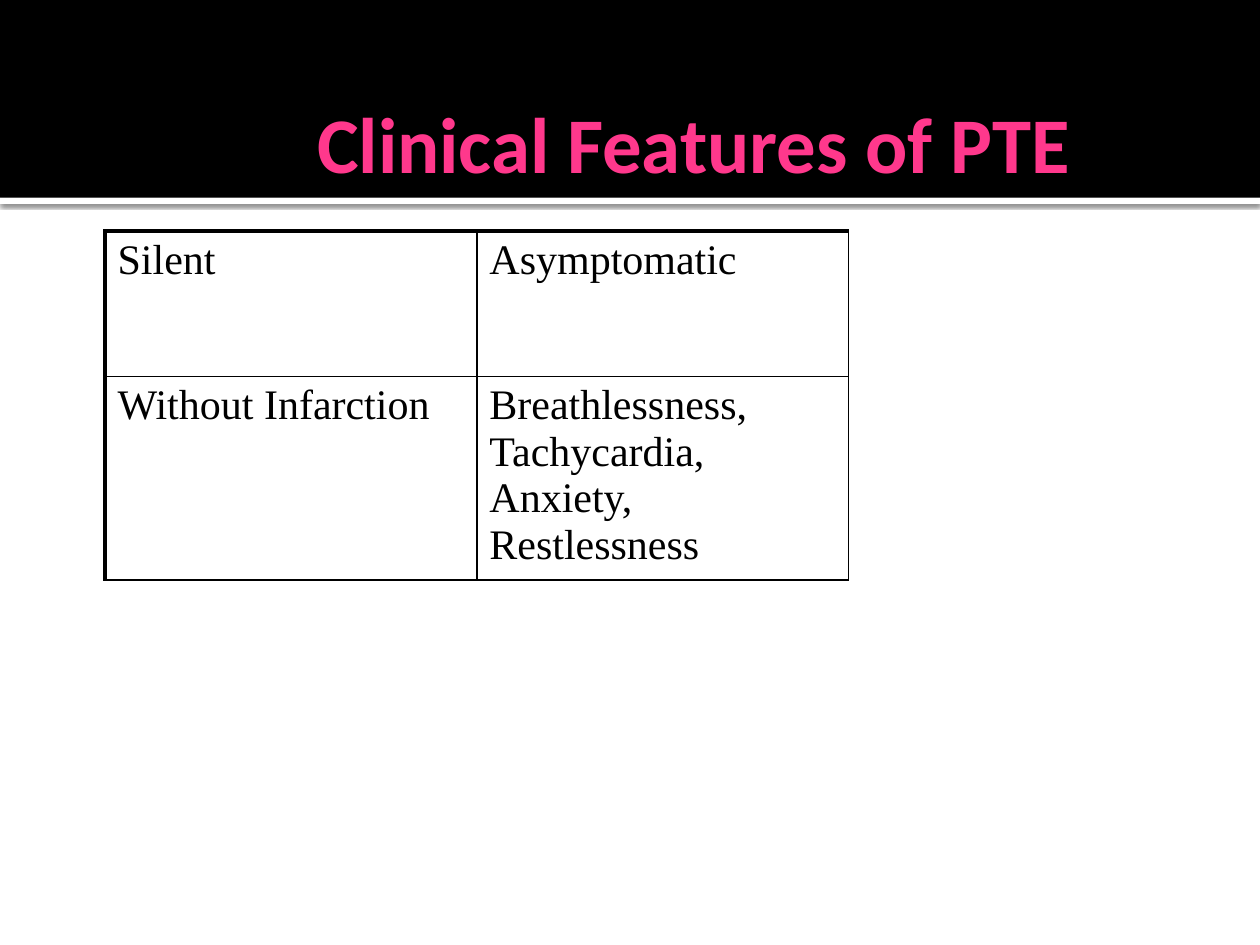
"""Build the slide on the clinical features of PTE."""
from lxml import etree
from pptx import Presentation
from pptx.dml.color import RGBColor
from pptx.enum.shapes import MSO_SHAPE
from pptx.enum.text import MSO_ANCHOR, PP_ALIGN
from pptx.oxml import parse_xml
from pptx.util import Pt

RECT = MSO_SHAPE.RECTANGLE
MIDDLE = MSO_ANCHOR.MIDDLE
LEFT = PP_ALIGN.LEFT
BLACK = RGBColor(0, 0, 0)
WHITE = RGBColor(255, 255, 255)
PINK = RGBColor(0xFF, 0x38, 0x8C)
NS = "http://schemas.openxmlformats.org/drawingml/2006/main"
ROWS = [
    ("Silent", "Asymptomatic"),
    ("Without Infarction", "Breathlessness, Tachycardia, Anxiety, Restlessness"),
]


def style(para, face, size, color, bold):
    para.alignment = LEFT
    font = para.font
    font.name, font.size, font.bold = face, Pt(size), bold
    font.color.rgb = color


def border(cell, side, width):
    line = parse_xml(
        f'<a:{side} xmlns:a="{NS}" w="{Pt(width)}"><a:solidFill>'
        f'<a:srgbClr val="{BLACK}"/></a:solidFill></a:{side}>'
    )
    cell._tc.get_or_add_tcPr().append(line)


prs = Presentation()
prs.slide_width, prs.slide_height = Pt(720), Pt(540)
slide = prs.slides.add_slide(prs.slide_layouts[5])
shapes = slide.shapes
title = shapes.title

for top, height, color in [(113, 3.6, WHITE), (0, 113, BLACK)]:
    band = shapes.add_shape(RECT, 0, Pt(top), Pt(720), Pt(height))
    band.shadow.inherit = False
    band.fill.solid()
    band.fill.fore_color.rgb = color
    band.line.fill.background()
    if color == WHITE:
        glow = band._element.spPr.find(f"{{{NS}}}effectLst")
        glow.append(parse_xml(
            f'<a:outerShdw xmlns:a="{NS}" blurRad="{Pt(2.5)}" dist="{Pt(0.8)}" '
            f'dir="5400000" rotWithShape="0"><a:srgbClr val="{BLACK}">'
            '<a:alpha val="60000"/></a:srgbClr></a:outerShdw>'
        ))

shapes._spTree.append(title._element)
title.left, title.top, title.width, title.height = Pt(174), Pt(36), Pt(498), Pt(90)
frame = title.text_frame
frame.text = "Clinical Features of PTE"
frame.word_wrap = True
frame.vertical_anchor = MIDDLE
frame.margin_left = Pt(7.2)
frame.margin_top = frame.margin_right = frame.margin_bottom = Pt(3.6)
style(frame.paragraphs[0], "Calibri", 45, PINK, True)

table = shapes.add_table(2, 2, Pt(60), Pt(132), Pt(425), Pt(199.4)).table
table.first_row = table.horz_banding = False
for row, height in zip(table.rows, (83, 116.4)):
    row.height = Pt(height)
for col in table.columns:
    col.width = Pt(212.5)

for i, texts in enumerate(ROWS):
    for j, text in enumerate(texts):
        cell = table.cell(i, j)
        cell.text = text
        para = cell.text_frame.paragraphs[0]
        style(para, "Times New Roman", 24, BLACK, False)
        gap = etree.Element(f"{{{NS}}}spcBef")
        etree.SubElement(gap, f"{{{NS}}}spcPct", val="20000")
        para._p.get_or_add_pPr().insert(0, gap)
        border(cell, "lnL", 1 if j else 2.25)
        border(cell, "lnR", 1)
        border(cell, "lnT", 1 if i else 2.25)
        border(cell, "lnB", 1)
        cell.fill.background()

prs.save("out.pptx")
